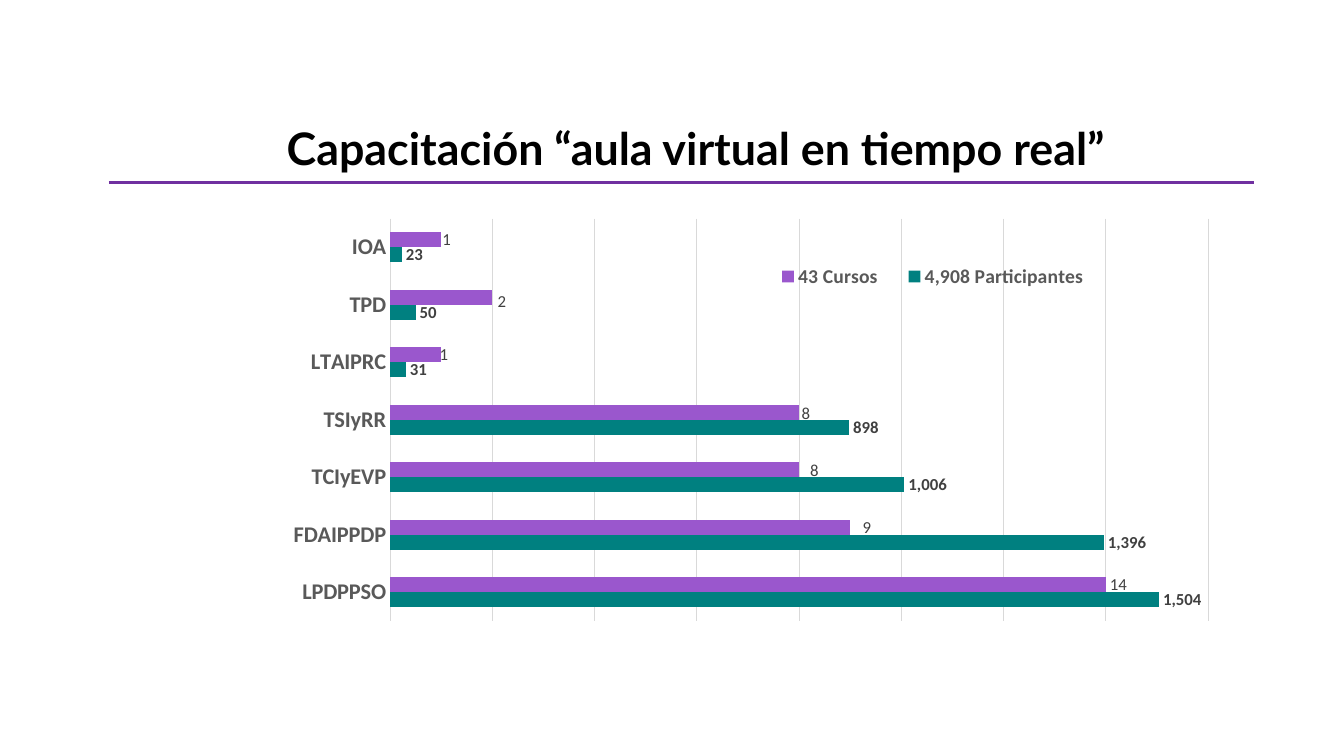
from lxml import etree
from pptx import Presentation
from pptx import util as u
from pptx.chart.data import CategoryChartData
from pptx.dml.color import RGBColor
from pptx.enum import chart as ch, shapes, text
from pptx.oxml.ns import qn

# Content
TITLE = "Capacitación “aula virtual en tiempo real”"
PARTICIPANTS = "4,908 Participantes"
COURSES = "43 Cursos"
COURSE_SCALE = 100  # a course is drawn as long as 100 participants
# Topic, participants, courses, shift of the course label (x, y) in points
TOPICS = [
    ("LPDPPSO", 1504, 14, (0, 0)),
    ("FDAIPPDP", 1396, 9, (6, 0)),
    ("TCIyEVP", 1006, 8, (5, 1)),
    ("TSIyRR", 898, 8, (-1, 1)),
    ("LTAIPRC", 31, 1, (-4, 0)),
    ("TPD", 50, 2, (1, 3)),
    ("IOA", 23, 1, (-2, 0)),
]

THEME = {
    "title_font": "Lato", "chart_font": "Calibri",
    "title": "000000", "rule": "7030A0", "grid": "D9D9D9",
    "axis_text": "595959", "label_text": "404040",
    "participants": "008080", "courses": "9A57CD",
    "title_size": 32, "axis_size": 16, "legend_size": 14, "label_size": 12,
}

# Places in points
SLIDE = (960, 540)
TITLE_BOX = (55.5, 85, 883.5, 46)
RULE = (77.75, 130.3, 895.5, 130.3)
CHART_BOX = (41, 105.1, 833.8, 393.1)
PLOT_AREA = (0.285, 0.13, 0.701, 0.731)  # shares of the chart
LEGEND_AREA = (0.6, 0.205, 0.3, 0.06)


def colour(key):
    return RGBColor.from_string(THEME[key])


def points(values):
    return [u.Pt(value) for value in values]


def set_all(target, values):
    for name, value in values.items():
        setattr(target, name, value)


def style_font(font, face, size, shade, bold=True):
    set_all(font, {"name": THEME[face], "size": u.Pt(THEME[size]), "bold": bold})
    font.color.rgb = colour(shade)


def manual_layout(modes, places):
    layout = etree.Element(qn("c:layout"))
    manual = etree.SubElement(layout, qn("c:manualLayout"))
    for tag, value in [*modes, *zip("xywh", places)]:
        etree.SubElement(manual, qn(f"c:{tag}")).set("val", str(value))
    return layout


def place_area(area, modes, places, after=None):
    for old in area.findall(qn("c:layout")):
        area.remove(old)
    layout = manual_layout(modes, places)
    if after is None:
        area.insert(0, layout)
    else:
        area.find(qn(after)).addnext(layout)


prs = Presentation()
prs.slide_width, prs.slide_height = points(SLIDE)
slide = prs.slides.add_slide(prs.slide_layouts[5])

# Title
title = slide.shapes.title
set_all(title, dict(zip(("left", "top", "width", "height"), points(TITLE_BOX))))
set_all(title.text_frame, {
    "text": TITLE, "word_wrap": True, "auto_size": text.MSO_AUTO_SIZE.NONE,
    "vertical_anchor": text.MSO_ANCHOR.MIDDLE,
})
heading = title.text_frame.paragraphs[0]
set_all(heading, {"alignment": text.PP_ALIGN.CENTER, "line_spacing": 0.9,
                  "space_before": u.Pt(0)})
style_font(heading.runs[0].font, "title_font", "title_size", "title")

# Rule under the title
rule = slide.shapes.add_connector(shapes.MSO_CONNECTOR.STRAIGHT, *points(RULE))
rule.line.color.rgb = colour("rule")
rule.line.width = u.Pt(2.25)
etree.SubElement(rule.element.spPr, qn("a:effectLst"))

# Chart
names, participants, courses, shifts = zip(*TOPICS)
data = CategoryChartData(number_format="#,##0")
data.categories = names
data.add_series(PARTICIPANTS, participants)
data.add_series(COURSES, [count * COURSE_SCALE for count in courses])
chart = slide.shapes.add_chart(
    ch.XL_CHART_TYPE.BAR_CLUSTERED, *points(CHART_BOX), data).chart
set_all(chart, {"has_title": False, "has_legend": True})
style_font(chart.font, "chart_font", "label_size", "label_text", False)
bars = chart.plots[0]
set_all(bars, {"gap_width": 182, "overlap": 0, "vary_by_categories": False})

# Axes
topic_axis, value_axis = chart.category_axis, chart.value_axis
set_all(topic_axis, {"major_tick_mark": ch.XL_TICK_MARK.NONE,
                     "has_major_gridlines": False})
style_font(topic_axis.tick_labels.font, "chart_font", "axis_size", "axis_text")
set_all(value_axis, {"visible": False, "has_major_gridlines": True,
                     "minimum_scale": 0, "maximum_scale": 1600, "major_unit": 200})
for line in (topic_axis.format.line, value_axis.major_gridlines.format.line):
    line.color.rgb = colour("grid")
    line.width = u.Pt(0.75)

# Bars and their labels
for series, shade in zip(bars.series, ("participants", "courses")):
    series.format.fill.solid()
    series.format.fill.fore_color.rgb = colour(shade)
    labels = series.data_labels
    set_all(labels, {"show_value": True, "number_format": "#,##0",
                     "number_format_is_linked": False,
                     "position": ch.XL_LABEL_POSITION.OUTSIDE_END})
    style_font(labels.font, "chart_font", "label_size", "label_text")

# Course labels show the count itself
for index, count in enumerate(courses):
    label = bars.series[1].points[index].data_label
    label.text_frame.text = str(count)
    label.position = ch.XL_LABEL_POSITION.OUTSIDE_END
    style_font(label.text_frame.paragraphs[0].runs[0].font,
               "chart_font", "label_size", "label_text", False)
for label, (dx, dy) in zip(chart.element.xpath(".//c:dLbl"), shifts):
    if dx or dy:
        share = (round(dx / CHART_BOX[2], 4), round(dy / CHART_BOX[3], 4))
        place_area(label, [], share, after="c:idx")

# Legend and plot places
legend = chart.legend
set_all(legend, {"position": ch.XL_LEGEND_POSITION.BOTTOM, "include_in_layout": False})
style_font(legend.font, "chart_font", "legend_size", "axis_text")
edges = [("xMode", "edge"), ("yMode", "edge")]
place_area(chart.element.xpath(".//c:legend")[0], edges, LEGEND_AREA, after="c:legendPos")
place_area(chart.element.xpath(".//c:plotArea")[0],
           [("layoutTarget", "inner"), *edges], PLOT_AREA)

prs.save("out.pptx")
